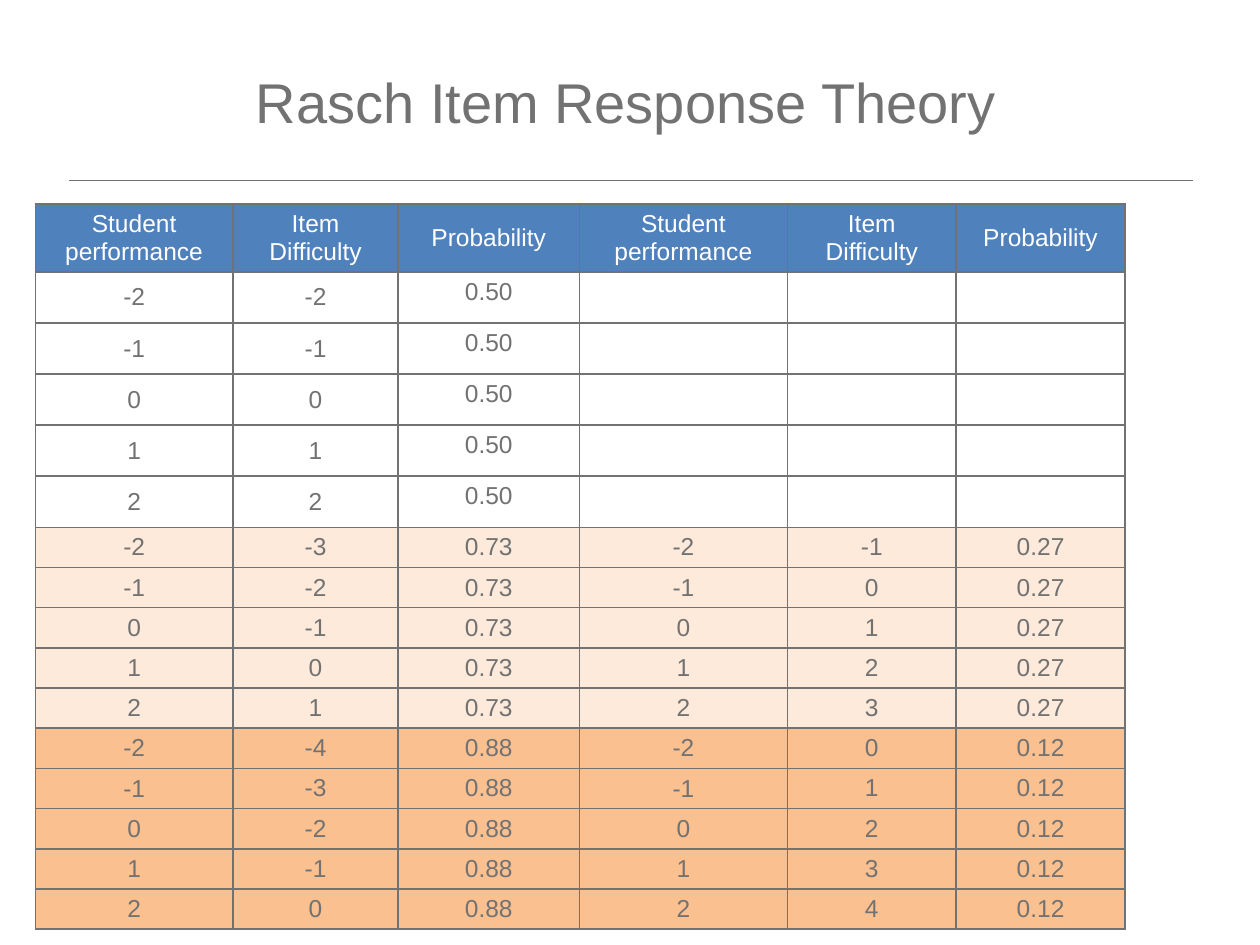
"""Build the Rasch item response theory slide: a title, a rule and a probability table."""
from lxml import etree
from pptx import Presentation
from pptx.dml.color import RGBColor
from pptx.enum.shapes import MSO_CONNECTOR
from pptx.enum.text import MSO_ANCHOR, MSO_AUTO_SIZE, PP_ALIGN
from pptx.oxml import parse_xml
from pptx.oxml.ns import nsdecls, qn
from pptx.util import Inches, Pt

STRAIGHT = MSO_CONNECTOR.STRAIGHT
TOP, MIDDLE = MSO_ANCHOR.TOP, MSO_ANCHOR.MIDDLE
LEFT, CENTER = PP_ALIGN.LEFT, PP_ALIGN.CENTER
NO_FIT = MSO_AUTO_SIZE.NONE

THEME = {
    "font": "Arial",
    "grey": "727272",
    "white": "FFFFFF",
    "header": "4F81BD",
    "bands": [None, "FDEADA", "FAC090"],
    "title_size": 32,
    "table_size": 14,
    "rule_width": 0.5,
    "border_width": 1,
}
COLUMN_WIDTHS = [1.57, 1.31, 1.44, 1.65, 1.34, 1.34]
HEADER_HEIGHT, ROW_HEIGHT = 0.43, 0.3
HEADINGS = ["Student performance", "Item Difficulty", "Probability"] * 2
PERFORMANCES = range(-2, 3)
PROBABILITIES = [("0.50", None), ("0.73", "0.27"), ("0.88", "0.12")]


def write(frame, text, size, color, align):
    para = frame.paragraphs[0]
    para.alignment = align
    span = para.add_run()
    span.text = text
    formats = {"name": THEME["font"], "size": Pt(size), "bold": False}
    for key, value in formats.items():
        setattr(span.font, key, value)
    span.font.color.rgb = RGBColor.from_string(color)


def format_cell(cell, fill, anchor):
    cell.vertical_anchor = anchor
    properties = cell._tc.get_or_add_tcPr()
    for side in "LRTB":
        properties.append(parse_xml(
            f'<a:ln{side} {nsdecls("a")} w="{Pt(THEME["border_width"])}"><a:solidFill>'
            f'<a:srgbClr val="{THEME["grey"]}"/></a:solidFill></a:ln{side}>'))
    if fill:
        cell.fill.solid()
        cell.fill.fore_color.rgb = RGBColor.from_string(fill)
    else:
        cell.fill.background()


deck = Presentation()
deck.slide_width, deck.slide_height = Inches(10), Inches(7.5)
page = deck.slides.add_slide(deck.slide_layouts[5])

title = page.shapes.title
place = {"left": 1.93, "top": 0.36, "width": 6.77, "height": 0.89}
for key, value in place.items():
    setattr(title, key, Inches(value))
for key, value in {"vertical_anchor": MIDDLE, "word_wrap": True, "auto_size": NO_FIT}.items():
    setattr(title.text_frame, key, value)
write(title.text_frame, "Rasch Item Response Theory", THEME["title_size"], THEME["grey"], LEFT)

rule = page.shapes.add_connector(STRAIGHT, Inches(0.55), Inches(1.43), Inches(9.47), Inches(1.43))
rule.line.width = Pt(THEME["rule_width"])
rule.line.color.rgb = RGBColor.from_string(THEME["grey"])
etree.SubElement(rule._element.spPr, qn("a:effectLst"))

rows = [(HEADINGS, THEME["header"], THEME["white"], range(6))]
for shift, (easier, harder) in enumerate(PROBABILITIES):
    for performance in PERFORMANCES:
        values = [performance, performance - shift, easier]
        values += [performance, performance + shift, harder] if harder else [None] * 3
        middle_columns = (0, 3) if harder else (0, 1)
        rows.append((values, THEME["bands"][shift], THEME["grey"], middle_columns))

holder = page.shapes.add_table(len(rows), len(COLUMN_WIDTHS), Inches(0.28), Inches(1.62),
                               Inches(sum(COLUMN_WIDTHS)), Inches(5.57))
table = holder.table
table.first_row = table.horz_banding = False
for column, width in zip(table.columns, COLUMN_WIDTHS):
    column.width = Inches(width)

for row_index, (values, fill, color, middle_columns) in enumerate(rows):
    table.rows[row_index].height = Inches(ROW_HEIGHT if row_index else HEADER_HEIGHT)
    for column_index, value in enumerate(values):
        cell = table.cell(row_index, column_index)
        format_cell(cell, fill, MIDDLE if column_index in middle_columns else TOP)
        if value is not None:
            write(cell.text_frame, str(value), THEME["table_size"], color, CENTER)

deck.save("out.pptx")
